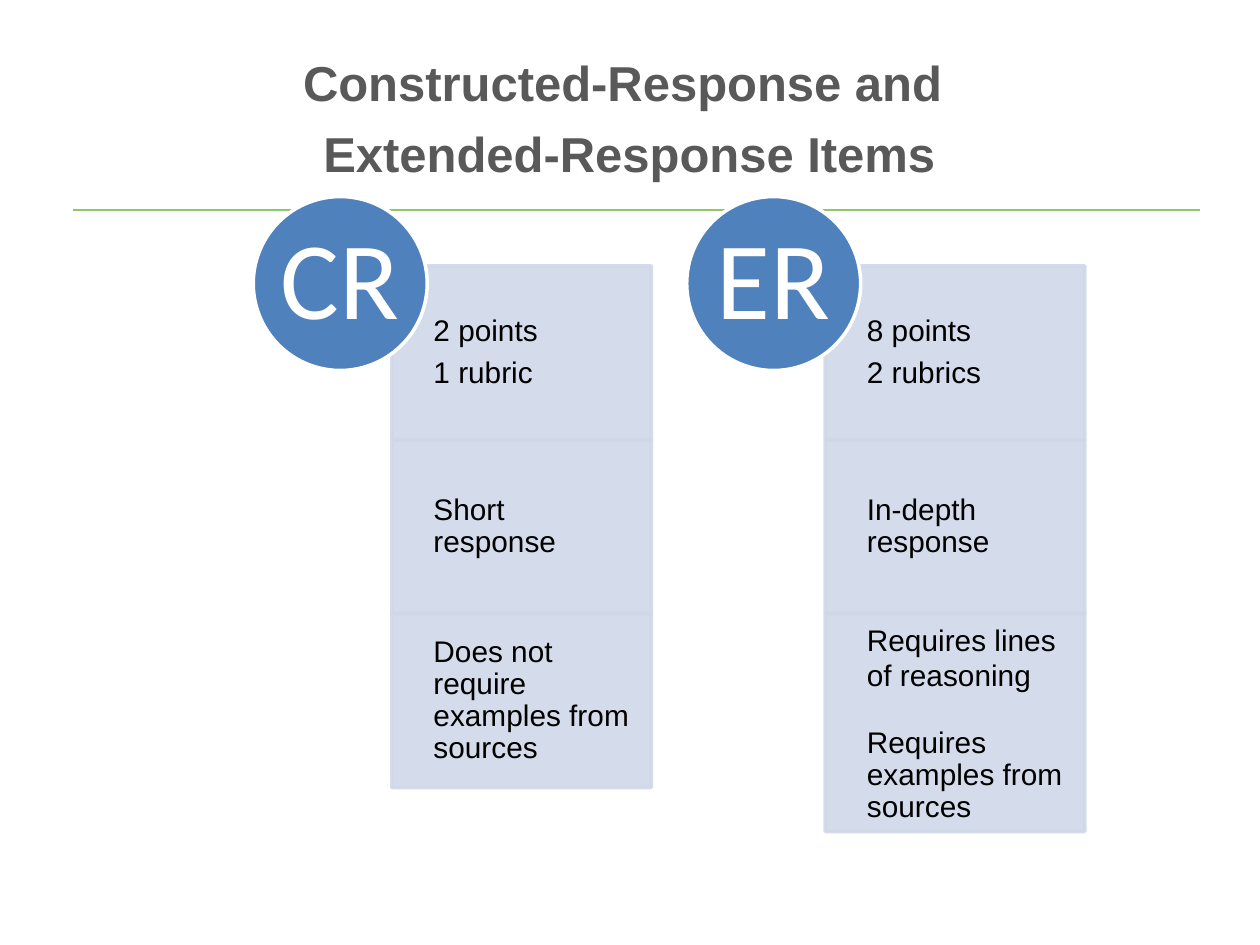
from lxml import etree
from pptx import Presentation
from pptx.dml.color import RGBColor
from pptx.enum.shapes import MSO_CONNECTOR, MSO_SHAPE
from pptx.enum.text import MSO_ANCHOR, PP_ALIGN
from pptx.oxml.ns import qn
from pptx.util import Pt

RECTANGLE, OVAL = MSO_SHAPE.RECTANGLE, MSO_SHAPE.OVAL
STRAIGHT = MSO_CONNECTOR.STRAIGHT
TOP, MIDDLE = MSO_ANCHOR.TOP, MSO_ANCHOR.MIDDLE
LEFT, CENTER = PP_ALIGN.LEFT, PP_ALIGN.CENTER

TITLE = ["Constructed-Response and ", "Extended-Response Items"]
# Each item type: badge, then rows of (height, paragraphs)
ITEM_TYPES = [
    ("CR", [
        (99.4, ["2 points", "1 rubric"]),
        (99.4, ["Short response"]),
        (99.4, ["Does not require examples from sources"]),
    ]),
    ("ER", [
        (99.4, ["8 points", "2 rubrics"]),
        (99.4, ["In-depth response"]),
        (124.6, ["Requires lines of reasoning", "Requires examples from sources"]),
    ]),
]
LOOSE_PARAGRAPH = "Requires lines of reasoning"

THEME = {
    "rule": RGBColor(0x90, 0xC5, 0x6A),
    "panel": RGBColor(0xD0, 0xD8, 0xE8),
    "badge": RGBColor(0x4F, 0x81, 0xBD),
    "badge_line": RGBColor(0xFF, 0xFF, 0xFF),
    "panel_opacity": 90,
    "title_font": {"name": "Arial", "size": Pt(28), "bold": True,
                   "color": RGBColor(0x59, 0x59, 0x59)},
    "row_font": {"name": "Arial", "size": Pt(17), "bold": False,
                 "color": RGBColor(0, 0, 0)},
    "badge_font": {"name": "Calibri", "size": Pt(63), "bold": False,
                   "color": RGBColor(0xFF, 0xFF, 0xFF)},
}
ROW_SPACING = {"line_spacing": 0.9, "space_after": Pt(6)}
LOOSE_SPACING = {"line_spacing": 1.0, "space_after": Pt(20)}

PANEL_LEFT, PANEL_TOP, PANEL_WIDTH = 223.9, 151.9, 148.3
COLUMN_STEP = 247.7
BADGE_SIZE, BADGE_SHIFT, BADGE_TOP = 99.4, 79.2, 112.3


def set_frame(frame, anchor, wrap, insets):
    """Insets are left, top, right, bottom in points."""
    frame.vertical_anchor, frame.word_wrap = anchor, wrap
    for side, inset in zip(("left", "top", "right", "bottom"), insets):
        setattr(frame, f"margin_{side}", Pt(inset))


def add_paragraph(frame, index, text, font, align, spacing):
    paragraph = frame.add_paragraph() if index else frame.paragraphs[0]
    paragraph.alignment = align
    for key, value in spacing.items():
        setattr(paragraph, key, value)
    run = paragraph.add_run()
    run.text = text
    for key in ("name", "size", "bold"):
        setattr(run.font, key, font[key])
    run.font.color.rgb = font["color"]


def set_opacity(fill_parent, percent):
    color = next(fill_parent.iter(qn("a:srgbClr")))
    etree.SubElement(color, qn("a:alpha")).set("val", str(percent * 1000))


def add_filled(slide, preset, box, fill, line):
    shape = slide.shapes.add_shape(preset, *map(Pt, box))
    shape.shadow.inherit = False
    shape.fill.solid()
    shape.fill.fore_color.rgb = fill
    shape.line.color.rgb = line
    shape.line.width = Pt(2)
    return shape


def add_title(slide):
    frame = slide.shapes.add_textbox(Pt(41), Pt(26.6), Pt(637.2), Pt(88.6)).text_frame
    set_frame(frame, TOP, True, (7.2, 3.6, 7.2, 3.6))
    for index, text in enumerate(TITLE):
        spacing = {"space_before": Pt(7)} if index else {}
        add_paragraph(frame, index, text, THEME["title_font"], CENTER, spacing)


def add_rule(slide):
    rule = slide.shapes.add_connector(STRAIGHT, Pt(41.8), Pt(120), Pt(686), Pt(120))
    rule.line.color.rgb = THEME["rule"]
    rule.line.width = Pt(1)
    etree.SubElement(rule.line._get_or_add_ln().getparent(), qn("a:effectLst"))


def add_row(slide, left, top, height, paragraphs):
    panel = add_filled(slide, RECTANGLE, (left, top, PANEL_WIDTH, height),
                       THEME["panel"], THEME["panel"])
    set_opacity(panel.fill._xPr.find(qn("a:solidFill")), THEME["panel_opacity"])
    set_opacity(panel.line._get_or_add_ln(), THEME["panel_opacity"])
    set_frame(panel.text_frame, MIDDLE, True, (23.8, 9.4, 9.4, 9.4))
    for index, text in enumerate(paragraphs):
        spacing = LOOSE_SPACING if text == LOOSE_PARAGRAPH else ROW_SPACING
        add_paragraph(panel.text_frame, index, text, THEME["row_font"], LEFT, spacing)


def add_badge(slide, left, label):
    badge = add_filled(slide, OVAL, (left, BADGE_TOP, BADGE_SIZE, BADGE_SIZE),
                       THEME["badge"], THEME["badge_line"])
    set_frame(badge.text_frame, MIDDLE, False, (0, 0, 0, 0))
    add_paragraph(badge.text_frame, 0, label, THEME["badge_font"], CENTER,
                  {"line_spacing": 0.9, "space_after": Pt(0)})


def main():
    deck = Presentation()
    deck.slide_width, deck.slide_height = Pt(720), Pt(540)
    slide = deck.slides.add_slide(deck.slide_layouts[6])
    add_rule(slide)
    add_title(slide)
    for column, (label, rows) in enumerate(ITEM_TYPES):
        left, top = PANEL_LEFT + column * COLUMN_STEP, PANEL_TOP
        for height, paragraphs in rows:
            add_row(slide, left, top, height, paragraphs)
            top += height
        add_badge(slide, left - BADGE_SHIFT, label)
    deck.save("out.pptx")


if __name__ == "__main__":
    main()
